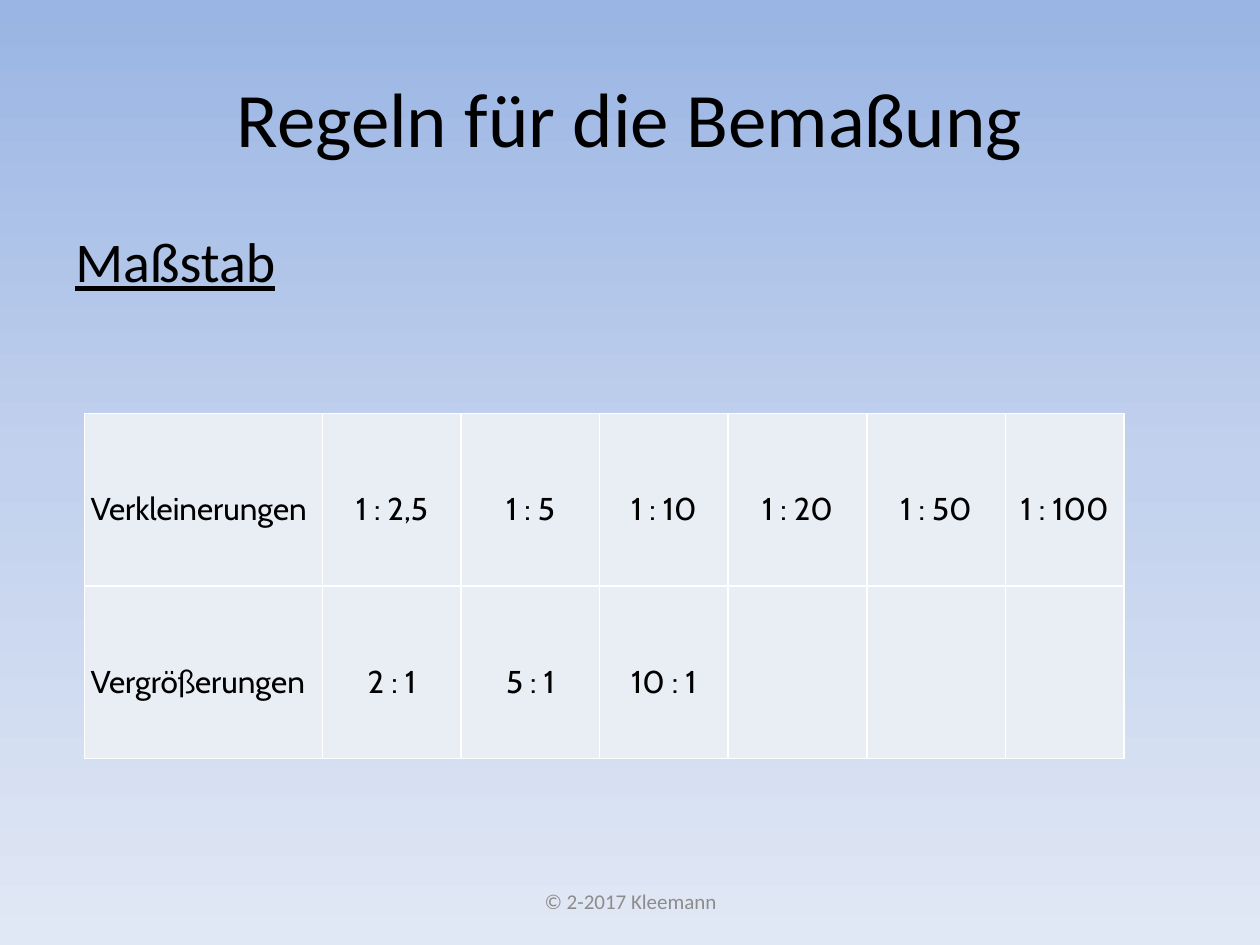
from copy import deepcopy
from typing import NamedTuple

from lxml import etree
from pptx import Presentation
from pptx.dml.color import RGBColor
from pptx.enum.text import MSO_ANCHOR, PP_ALIGN
from pptx.oxml.ns import qn
from pptx.util import Inches, Pt

LEFT, CENTER = PP_ALIGN.LEFT, PP_ALIGN.CENTER
TOP, MIDDLE = MSO_ANCHOR.TOP, MSO_ANCHOR.MIDDLE

COLORS = {
    "sky_top": "9AB5E4", "sky_middle": "C2D1ED", "sky_bottom": "E1E8F5",
    "text": "000000", "footer": "8C8C8C", "cell": "E9EDF4", "border": "FFFFFF",
}
COLUMN_WIDTHS = [1.89, 1.1, 1.1, 1.02, 1.1, 1.1, 0.94]
ROW_HEIGHT = 1.37
LINE_HEIGHT = 0.46  # one blank line above each cell text
SCALES = [
    ["Verkleinerungen", "1 : 2,5", "1 : 5", "1 : 10", "1 : 20", "1 : 50", "1 : 100"],
    ["Vergrößerungen", "2 : 1", "5 : 1", "10 : 1", "", "", ""],
]


class TextBlock(NamedTuple):
    text: str
    area: tuple[float, float, float, float]
    size: int
    color: str = "text"
    align: PP_ALIGN = CENTER
    anchor: MSO_ANCHOR = MIDDLE
    underline: bool = False
    space_before: float = 0


BLOCKS = [
    TextBlock("Regeln für die Bemaßung", (0.5, 0.3, 9, 1.25), 44),
    TextBlock("Maßstab", (0.5, 1.75, 9, 4.95), 32, align=LEFT, anchor=TOP,
              underline=True, space_before=6.4),
    TextBlock("© 2-2017 Kleemann", (3.42, 6.95, 3.17, 0.4), 12, "footer"),
]


def rgb(name: str) -> RGBColor:
    return RGBColor.from_string(COLORS[name])


def write_text(frame, text: str, *, size: int, font: str = "Calibri",
               color: str = "text", align: PP_ALIGN = LEFT,
               underline: bool = False, space_before: float = 0,
               line_spacing: float = 1.0) -> None:
    para = frame.paragraphs[0]
    para.alignment = align
    para.space_before = Pt(space_before)
    para.line_spacing = line_spacing
    if not text:
        para.font.size = Pt(size)
        return
    span = para.add_run()
    span.text = text
    span.font.name = font
    span.font.size = Pt(size)
    span.font.underline = underline
    span.font.color.rgb = rgb(color)


def paint_background(page) -> None:
    fill = page.background.fill
    fill.gradient()
    fill.gradient_angle = 270
    stop_list = page.background._cSld.find(".//" + qn("a:gsLst"))
    stop_list.insert(1, deepcopy(stop_list[0]))
    names = ["sky_top", "sky_middle", "sky_bottom"]
    for index, (stop, name) in enumerate(zip(fill.gradient_stops, names)):
        stop.position = index / 2
        stop.color.rgb = rgb(name)


def add_text_block(page, block: TextBlock) -> None:
    box = page.shapes.add_textbox(*map(Inches, block.area))
    frame = box.text_frame
    frame.word_wrap = True
    frame.vertical_anchor = block.anchor
    write_text(frame, block.text, size=block.size, color=block.color,
               align=block.align, underline=block.underline,
               space_before=block.space_before)


def add_borders(cell) -> None:
    properties = cell._tc.get_or_add_tcPr()
    for index, side in enumerate(("lnL", "lnR", "lnT", "lnB")):
        line = etree.Element(qn(f"a:{side}"), w=str(Pt(1)))
        solid = etree.SubElement(line, qn("a:solidFill"))
        etree.SubElement(solid, qn("a:srgbClr"), val=COLORS["border"])
        properties.insert(index, line)


def add_scale_table(page) -> None:
    table = page.shapes.add_table(
        len(SCALES), len(COLUMN_WIDTHS), Inches(0.67), Inches(3.28),
        Inches(sum(COLUMN_WIDTHS)), Inches(ROW_HEIGHT * len(SCALES))).table
    table.first_row = table.horz_banding = False
    for column, width in zip(table.columns, COLUMN_WIDTHS):
        column.width = Inches(width)
    for row_index, texts in enumerate(SCALES):
        table.rows[row_index].height = Inches(ROW_HEIGHT)
        for column_index, text in enumerate(texts):
            cell = table.cell(row_index, column_index)
            cell.fill.solid()
            cell.fill.fore_color.rgb = rgb("cell")
            cell.margin_left = cell.margin_right = Inches(0.05)
            cell.margin_top, cell.margin_bottom = Inches(LINE_HEIGHT), 0
            write_text(cell.text_frame, text, size=18, font="Cabin",
                       align=CENTER if column_index else LEFT, line_spacing=1.5)
            add_borders(cell)


def main() -> None:
    deck = Presentation()
    deck.slide_width, deck.slide_height = Inches(10), Inches(7.5)
    page = deck.slides.add_slide(deck.slide_layouts[6])
    paint_background(page)
    # Title, heading and footer
    for block in BLOCKS:
        add_text_block(page, block)
    # Reduction and enlargement scales
    add_scale_table(page)
    deck.save("out.pptx")


if __name__ == "__main__":
    main()
